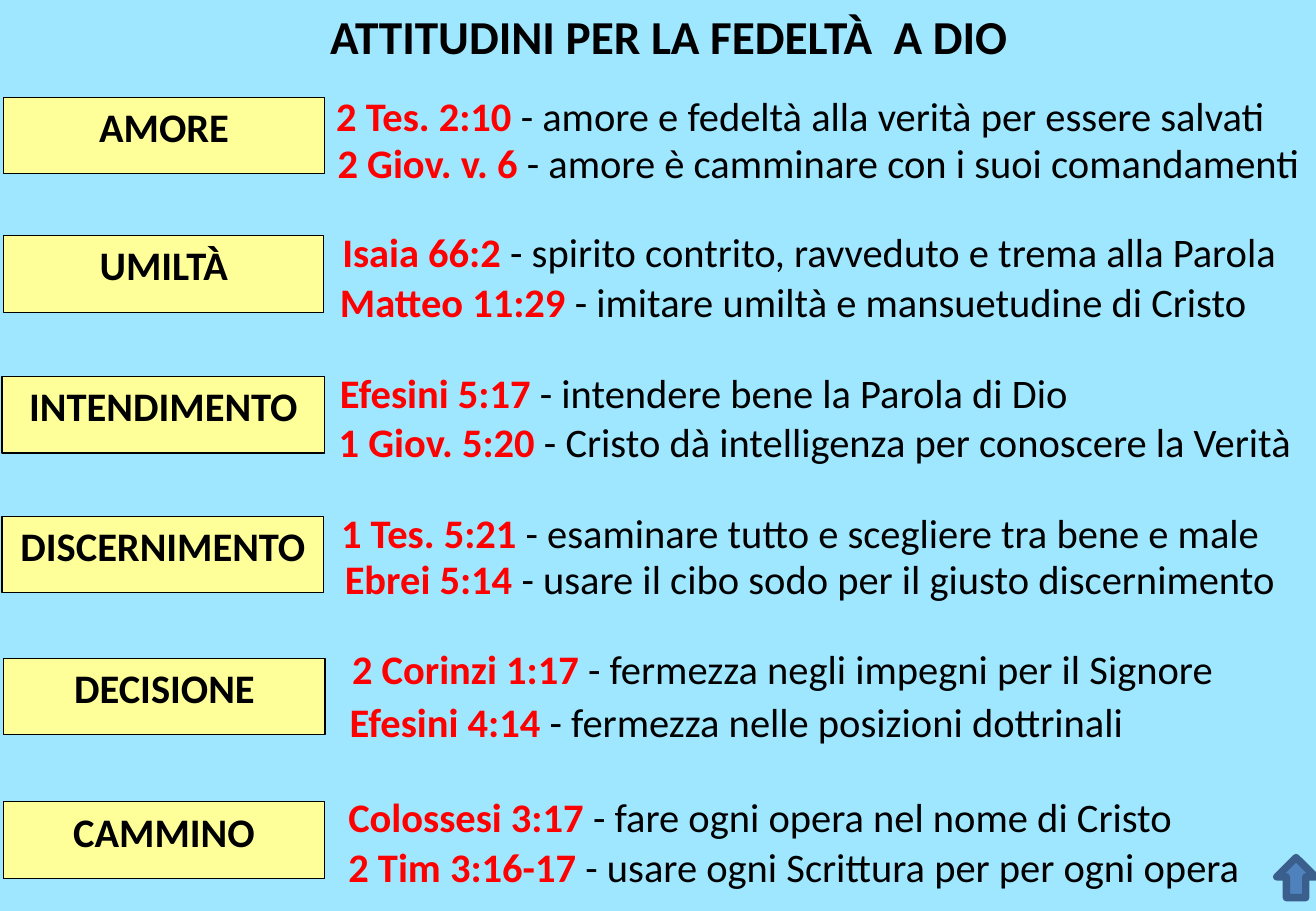
from pptx import Presentation
from pptx.dml.color import RGBColor
from pptx.enum.shapes import MSO_SHAPE as Shape
from pptx.enum.text import MSO_ANCHOR as Anchor, PP_ALIGN as Align
from pptx.oxml.ns import qn
from pptx.util import Pt
from lxml.etree import SubElement

SLIDE_WIDTH, SLIDE_HEIGHT = 780, 540
BOX_HEIGHT, VERSE_HEIGHT = 45.4, 36
COLORS = {
    "background": "9FE6FF",
    "box": "FFFF99",
    "text": "000000",
    "reference": "FF0000",
    "arrow": "4F81BD",
    "arrow_line": "3A5F8C",
}
# Attitude, box (left, top, width), verses (left, top, reference, meaning)
ATTITUDES = [
    ("AMORE", (2.2, 57.6, 190), [
        (192.2, 50.4, "2 Tes. 2:10", "amore e fedeltà alla verità per essere salvati"),
        (193, 78.5, "2 Giov. v. 6", "amore è camminare con i suoi comandamenti")]),
    ("UMILTÀ", (2.2, 139.7, 189.6), [
        (195.8, 131, "Isaia 66:2", "spirito contrito, ravveduto e trema alla Parola"),
        (194.4, 160.6, "Matteo 11:29", "imitare umiltà e mansuetudine di Cristo")]),
    ("INTENDIMENTO", (1.2, 223.2, 191.3), [
        (194.4, 214.6, "Efesini 5:17", "intendere bene la Parola di Dio"),
        (193.7, 243.4, "1 Giov. 5:20", "Cristo dà intelligenza per conoscere la Verità")]),
    ("DISCERNIMENTO", (1.2, 306, 190.8), [
        (195.1, 297.4, "1 Tes. 5:21", "esaminare tutto e scegliere tra bene e male"),
        (197.3, 324.7, "Ebrei 5:14", "usare il cibo sodo per il giusto discernimento")]),
    ("DECISIONE", (2.2, 390.2, 190.5), [
        (201.6, 378, "2 Corinzi 1:17", "fermezza negli impegni per il Signore"),
        (200.2, 409.7, "Efesini 4:14", "fermezza nelle posizioni dottrinali")]),
    ("CAMMINO", (2.2, 475.2, 190), [
        (199.4, 465.8, "Colossesi 3:17", "fare ogni opera nel nome di Cristo"),
        (199.4, 495.4, "2 Tim 3:16-17", "usare ogni Scrittura per per ogni opera")]),
]


def rgb(name):
    return RGBColor.from_string(COLORS[name])


def set_attributes(target, values):
    for name, value in values.items():
        setattr(target, name, value)


def format_frame(frame, inset_x=7.2, inset_y=3.6):
    set_attributes(frame, {
        "word_wrap": True,
        "vertical_anchor": Anchor.TOP,
        "margin_left": Pt(inset_x),
        "margin_right": Pt(inset_x),
        "margin_top": Pt(inset_y),
        "margin_bottom": Pt(inset_y),
    })


def add_run(paragraph, text, color="text", size=24, bold=True):
    run = paragraph.add_run()
    run.text = text
    set_attributes(run.font, {"name": "Calibri", "size": Pt(size), "bold": bold})
    run.font.color.rgb = rgb(color)


def add_filled_shape(slide, kind, bounds, fill, line, line_width):
    shape = slide.shapes.add_shape(kind, *map(Pt, bounds))
    shape.shadow.inherit = False
    shape.fill.solid()
    shape.fill.fore_color.rgb = rgb(fill)
    shape.line.color.rgb = rgb(line)
    shape.line.width = Pt(line_width)
    return shape


def add_title(slide, text):
    title = slide.shapes.title
    set_attributes(title, {
        "left": Pt(97.2), "top": Pt(0.7), "width": Pt(598.3), "height": Pt(41)})
    format_frame(title.text_frame)
    paragraph = title.text_frame.paragraphs[0]
    paragraph.alignment = Align.CENTER
    add_run(paragraph, text, size=28)


def add_attitude_box(slide, text, left, top, width):
    box = add_filled_shape(slide, Shape.RECTANGLE, (left, top, width, BOX_HEIGHT),
                           "box", "text", 0.75)
    format_frame(box.text_frame, 5.8, 2.9)
    paragraph = box.text_frame.paragraphs[0]
    paragraph.alignment = Align.CENTER
    add_run(paragraph, text)


def add_verse(slide, left, top, reference, meaning):
    bounds = (left, top, SLIDE_WIDTH - left, VERSE_HEIGHT)
    frame = slide.shapes.add_textbox(*map(Pt, bounds)).text_frame
    format_frame(frame)
    paragraph = frame.paragraphs[0]
    add_run(paragraph, reference + " ", "reference")
    add_run(paragraph, "- " + meaning, bold=False)


def add_up_arrow(slide):
    arrow = add_filled_shape(slide, Shape.UP_ARROW, (756.7, 508.3, 23, 23.8),
                             "arrow", "arrow_line", 4.33)
    SubElement(arrow.line._get_or_add_ln(), qn("a:round"))


def main():
    presentation = Presentation()
    set_attributes(presentation, {
        "slide_width": Pt(SLIDE_WIDTH), "slide_height": Pt(SLIDE_HEIGHT)})
    slide = presentation.slides.add_slide(presentation.slide_layouts[5])
    slide.background.fill.solid()
    slide.background.fill.fore_color.rgb = rgb("background")

    add_title(slide, "ATTITUDINI PER LA FEDELTÀ  A DIO")
    for attitude, box, verses in ATTITUDES:
        add_attitude_box(slide, attitude, *box)
        for verse in verses:
            add_verse(slide, *verse)
    add_up_arrow(slide)
    presentation.save("out.pptx")


if __name__ == "__main__":
    main()
